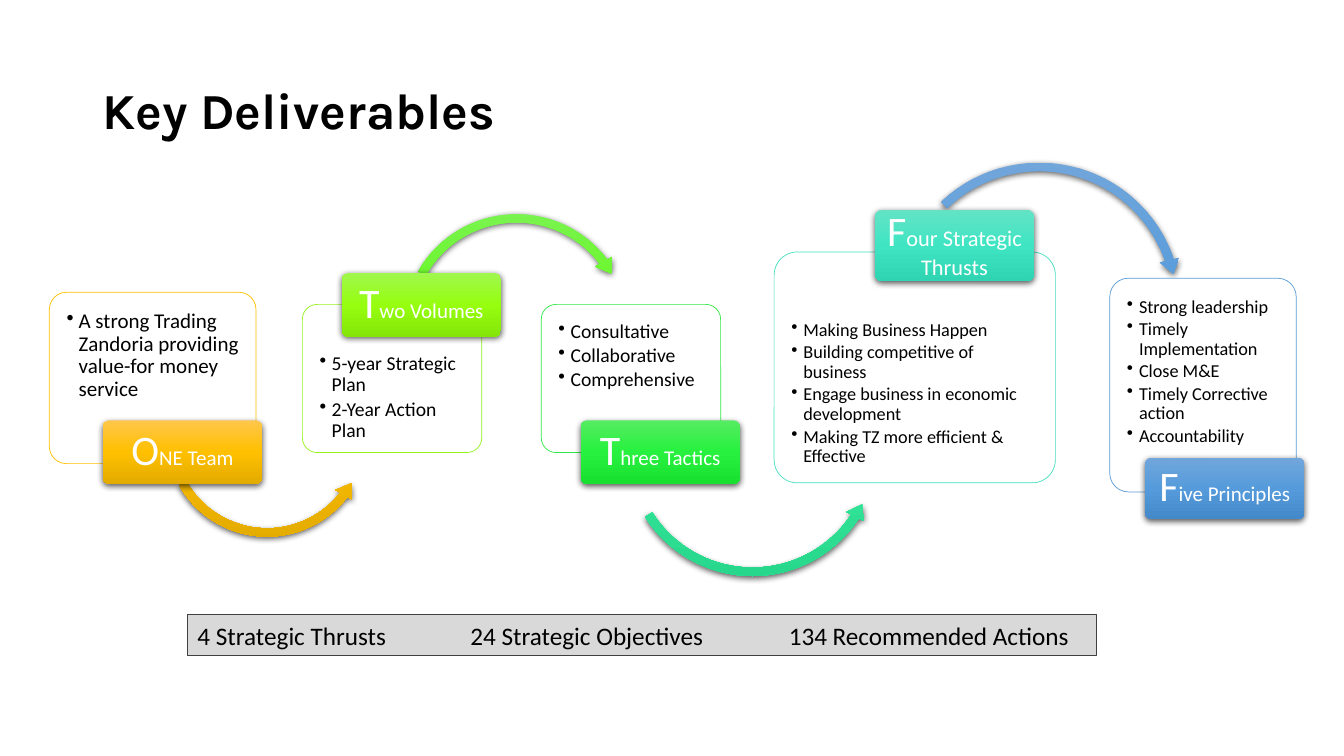
from copy import deepcopy

from pptx import Presentation
from pptx.dml.color import RGBColor
from pptx.enum.shapes import MSO_SHAPE
from pptx.enum.text import MSO_ANCHOR, MSO_AUTO_SIZE, PP_ALIGN
from pptx.oxml import parse_xml
from pptx.oxml.ns import nsdecls, qn
from pptx.util import Inches, Pt

COLUMNS, ROWS = 160, 90
CORNER = 0.1
COLOURS = {
    "text": "000000", "light": "FFFFFF", "bar": "D9D9D9", "bar line": "404040",
    "amber": "FFC000", "lime": "94F319", "green": "30E845",
    "teal": "46DEBF", "blue": "5B9BD5",
}
GRADIENTS = {
    "amber": ("FFC64B", "FFC000", "E3AB00"),
    "lime": ("A0F74E", "96FE0E", "85E509"),
    "leaf": ("7AF350", "63F916", "56E50C"),
    "green": ("56EC62", "27F13E", "18E02F"),
    "mint": ("5EE6A6", "37E99C", "27D88C"),
    "teal": ("63E3C6", "3FE5C3", "2FD4B2"),
    "blue": ("71A6DB", "559BDB", "448ACA"),
}
UNDER, OVER = MSO_SHAPE.LEFT_CIRCULAR_ARROW, MSO_SHAPE.CIRCULAR_ARROW

# Places are left, top, width, height in grid columns and rows.
STEPS = [
    {"colour": "amber", "card": (5.88, 34.8, 24.6, 20.4), "text_top": 0.18, "size": 15,
     "items": ["A strong Trading Zandoria providing value-for money service"],
     "label": "ONE Team", "label_place": (12.24, 50.04, 18.96, 7.56), "label_size": 15,
     "arrow": (UNDER, "amber", (19.08, 39.12, 25.44, 25.44),
               (0.039, 4.917, 22.655, 90.228, 0.046))},
    {"colour": "lime", "card": (36, 36.24, 21.36, 17.64), "text_top": 0.49, "size": 14,
     "items": ["5-year Strategic Plan", "2-Year Action Plan"],
     "label": "Two Volumes", "label_place": (40.68, 32.52, 18.96, 7.56), "label_size": 15,
     "arrow": (OVER, "leaf", (47.4, 24.84, 28.2, 28.2),
               (0.035, 4.402, 193.843, 125.755, 0.041))},
    {"colour": "green", "card": (64.44, 36.24, 21.36, 17.64), "text_top": 0.17, "size": 14,
     "items": ["Consultative", "Collaborative", "Comprehensive"],
     "label": "Three Tactics", "label_place": (69.12, 50.04, 18.96, 7.56), "label_size": 15,
     "arrow": (UNDER, "mint", (73.8, 37.68, 31.56, 31.56),
               (0.032, 3.892, 20.006, 88.603, 0.037))},
    {"colour": "teal", "card": (92.16, 30, 33.48, 27.48), "text_top": 0.68, "size": 13,
     "items": ["Making Business Happen", "Building competitive of business",
               "Engage business in economic development",
               "Making TZ more efficient & Effective"],
     "label": "Four Strategic Thrusts", "label_place": (104.16, 24.96, 18.96, 8.52),
     "label_size": 16,
     "arrow": (OVER, "blue", (106.2, 18.72, 35.04, 35.04),
               (0.029, 3.483, 204.789, 135.782, 0.033))},
    {"colour": "blue", "card": (132.12, 33.12, 22.2, 25.44), "text_top": 0.19, "size": 13,
     "items": ["Strong leadership", "Timely Implementation", "Close M&E",
               "Timely Corrective action", "Accountability"],
     "label": "Five Principles", "label_place": (136.32, 54.48, 18.96, 7.32),
     "label_size": 15, "arrow": None},
]


def rgb(name):
    return RGBColor.from_string(COLOURS[name])


class DeliverablesSlide:
    def __init__(self, presentation):
        self.font = "Calibri"
        self.column = presentation.slide_width / COLUMNS
        self.row = presentation.slide_height / ROWS
        self.slide = presentation.slides.add_slide(presentation.slide_layouts[5])

    def box(self, place):
        """Turn grid columns and rows into slide lengths."""
        units = (self.column, self.row) * 2
        return [round(length * unit) for length, unit in zip(place, units)]

    def style(self, paragraph, size, colour, font=None):
        paragraph.font.name = font or self.font
        paragraph.font.size = Pt(size)
        paragraph.font.color.rgb = rgb(colour)

    def shape(self, kind, place, adjustments=()):
        shape = self.slide.shapes.add_shape(kind, *self.box(place))
        shape.shadow.inherit = False
        for index, value in enumerate(adjustments):
            shape.adjustments[index] = value
        return shape

    def frame(self, shape, side, top, bottom, anchor):
        frame = shape.text_frame
        frame.word_wrap = True
        frame.margin_left = frame.margin_right = Inches(side)
        frame.margin_top, frame.margin_bottom = Inches(top), Inches(bottom)
        frame.vertical_anchor = anchor
        return frame

    def title(self, text, place):
        title = self.slide.shapes.title
        title.left, title.top, title.width, title.height = self.box(place)
        title.text_frame.text = text
        title.text_frame.auto_size = MSO_AUTO_SIZE.NONE
        title.text_frame.vertical_anchor = MSO_ANCHOR.MIDDLE
        paragraph = title.text_frame.paragraphs[0]
        paragraph.alignment = PP_ALIGN.LEFT
        paragraph.line_spacing = 0.9
        self.style(paragraph, 36, "text", "Karla")
        paragraph.font.bold = True

    def glossy(self, kind, place, gradient, adjustments):
        """Add a shape with a three-stop vertical gradient and a soft shadow."""
        shape = self.shape(kind, place, adjustments)
        shape.line.fill.background()
        shape.fill.gradient()
        shape.fill.gradient_angle = 270
        properties = shape._element.spPr
        stop_list = properties.find(qn("a:gradFill")).find(qn("a:gsLst"))
        stop_list.append(deepcopy(stop_list[0]))
        for index, stop in enumerate(shape.fill.gradient_stops):
            stop.position = index / 2
            stop.color.rgb = RGBColor.from_string(GRADIENTS[gradient][index])
        properties.find(qn("a:effectLst")).append(parse_xml(
            f'<a:outerShdw {nsdecls("a")} blurRad="{Pt(4.5)}" dist="{Pt(1.5)}" '
            'dir="5400000" algn="ctr" rotWithShape="0"><a:srgbClr val="000000">'
            '<a:alpha val="63000"/></a:srgbClr></a:outerShdw>'))
        return shape

    def card(self, place, colour, items, size, text_top):
        card = self.shape(MSO_SHAPE.ROUNDED_RECTANGLE, place, [CORNER])
        card.fill.solid()
        card.fill.fore_color.rgb = rgb("light")
        fill_colour = card._element.spPr.find(qn("a:solidFill"))[0]
        fill_colour.append(parse_xml(f'<a:alpha {nsdecls("a")} val="90000"/>'))
        card.line.color.rgb = rgb(colour)
        card.line.width = Pt(0.5)
        # Rounded corners already push the text inwards by 0.29 of their radius.
        corner_inset = 0.29 * CORNER * min(card.width, card.height) / Inches(1)
        frame = self.frame(card, 0.17 - corner_inset, text_top - corner_inset, 0,
                           MSO_ANCHOR.TOP)
        frame.text = "\n".join(items)
        for paragraph in frame.paragraphs:
            paragraph.alignment = PP_ALIGN.LEFT
            paragraph.line_spacing = 0.9
            paragraph.space_after = Pt(0.15 * size)
            properties = paragraph._p.get_or_add_pPr()
            properties.set("marL", str(Inches(0.12)))
            properties.set("indent", str(-Inches(0.12)))
            properties.append(parse_xml(f'<a:buChar {nsdecls("a")} char="•"/>'))
            self.style(paragraph, size, "text")
            paragraph.runs[0].font.size = Pt(size)  # bullets take their size from the run

    def label(self, place, gradient, text, size):
        """Add a glossy label whose first letter is enlarged."""
        label = self.glossy(MSO_SHAPE.ROUNDED_RECTANGLE, place, gradient, [CORNER])
        frame = self.frame(label, 0.06, 0.06, 0.06, MSO_ANCHOR.MIDDLE)
        paragraph = frame.paragraphs[0]
        paragraph.alignment = PP_ALIGN.CENTER
        paragraph.line_spacing = 0.9
        self.style(paragraph, size, "light")
        for part, part_size in ((text[0], 30), (text[1:], size)):
            run = paragraph.add_run()
            run.text = part
            run.font.size = Pt(part_size)

    def summary(self, place, parts, tab_stops):
        bar = self.shape(MSO_SHAPE.RECTANGLE, place)
        bar.fill.solid()
        bar.fill.fore_color.rgb = rgb("bar")
        bar.line.color.rgb = rgb("bar line")
        bar.line.width = Pt(0.75)
        frame = self.frame(bar, 0.1, 0.05, 0.05, MSO_ANCHOR.TOP)
        frame.text = "\t".join(parts)
        paragraph = frame.paragraphs[0]
        paragraph.alignment = PP_ALIGN.LEFT
        tabs = "".join(f'<a:tab pos="{round(stop * self.column)}" algn="l"/>'
                       for stop in tab_stops)
        paragraph._p.get_or_add_pPr().append(
            parse_xml(f'<a:tabLst {nsdecls("a")}>{tabs}</a:tabLst>'))
        self.style(paragraph, 18, "text")


def main():
    presentation = Presentation()
    presentation.slide_width, presentation.slide_height = Inches(13.33), Inches(7.5)
    slide = DeliverablesSlide(presentation)
    slide.title("Key Deliverables", (11, 4.8, 138, 17.4))
    for step in STEPS:
        slide.card(step["card"], step["colour"], step["items"], step["size"], step["text_top"])
        if step["arrow"]:
            kind, gradient, place, adjustments = step["arrow"]
            slide.glossy(kind, place, gradient, adjustments)
        slide.label(step["label_place"], step["colour"], step["label"], step["label_size"])
    slide.summary((22.32, 73.2, 108.24, 4.8),
                  ["4 Strategic Thrusts", "24 Strategic Objectives", "134 Recommended Actions"],
                  [32.5, 70.4])
    presentation.save("out.pptx")


if __name__ == "__main__":
    main()
